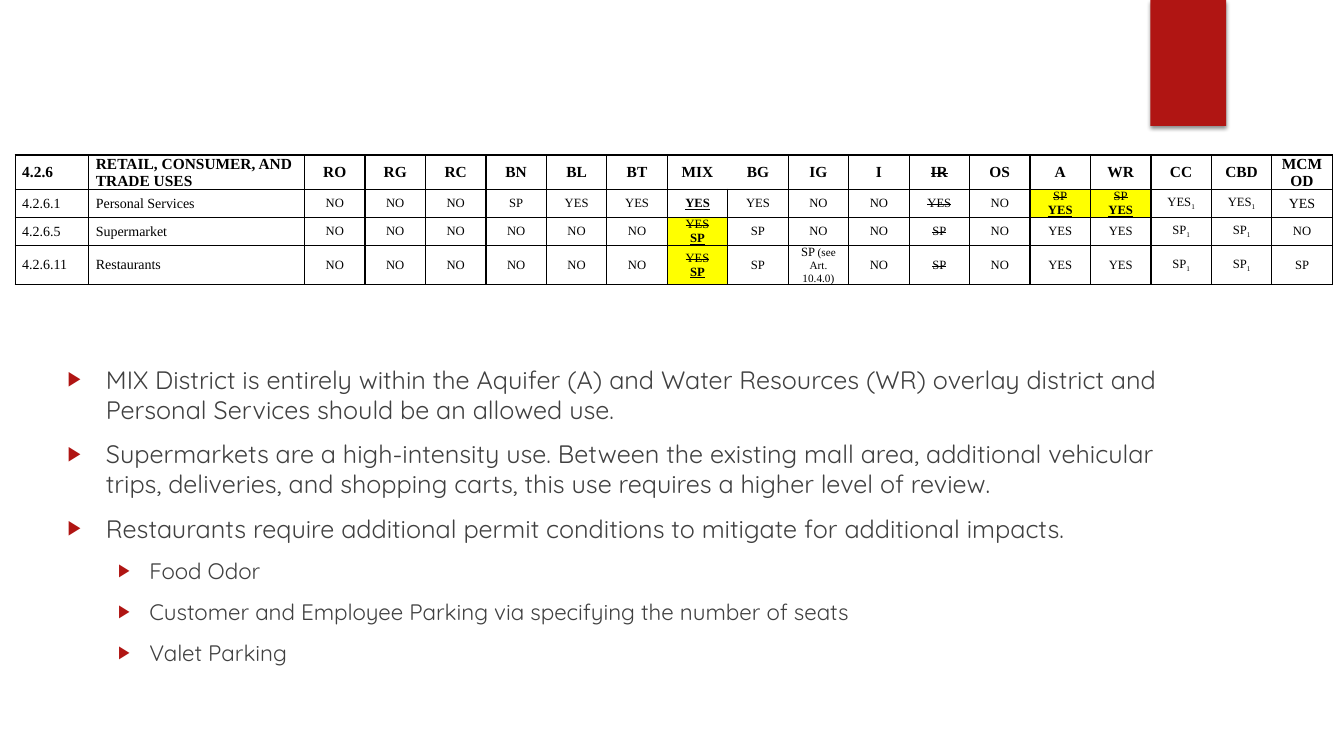
from dataclasses import dataclass

from lxml.etree import SubElement
from pptx import Presentation
from pptx.dml.color import RGBColor
from pptx.enum.shapes import MSO_SHAPE
from pptx.enum.text import MSO_ANCHOR, MSO_AUTO_SIZE, PP_ALIGN
from pptx.oxml.ns import qn
from pptx.util import Inches, Pt


@dataclass(frozen=True)
class Theme:
    accent: str = "B01513"
    body_ink: str = "404040"
    table_ink: str = "000000"
    highlight: str = "FFFF00"
    body_font: str = "Quicksand"
    table_font: str = "Times New Roman"
    point_size: int = 18
    subpoint_size: int = 16
    heading_size: int = 11
    use_size: int = 10
    code_size: int = 9
    note_size: int = 8
    thin: float = 1
    thick: float = 1.5


THEME = Theme()
SLIDE_WIDTH, SLIDE_HEIGHT = Inches(13.33), Inches(7.5)

STRUCK = {"strike": True}
ADDED = {"bold": True, "underline": True}
SUBSCRIPT = {"baseline": -25000}


def plain(text, **style):
    return [[(text, style)]]


def amended(before, after):
    return [[(before, STRUCK)], [(after, ADDED)]]


def footnoted(text):
    return [[(text, {}), ("1", SUBSCRIPT)]]


NO, SP, YES = plain("NO"), plain("SP"), plain("YES")
SEE_ARTICLE = [[("SP ", {}), ("(see Art. 10.4.0)", {"size": THEME.note_size})]]

DISTRICTS = ["RO", "RG", "RC", "BN", "BL", "BT", "MIX", "BG", "IG", "I",
             "IR", "OS", "A", "WR", "CC", "CBD", "MCMOD"]
USES = [
    ("4.2.6.1", "Personal Services",
     [NO] * 3 + [SP, YES, YES, plain("YES", **ADDED), YES, NO, NO,
                 plain("YES", **STRUCK), NO]
     + [amended("SP", "YES")] * 2 + [footnoted("YES")] * 2
     + [plain("YES", size=THEME.use_size)]),
    ("4.2.6.5", "Supermarket",
     [NO] * 6 + [amended("YES", "SP"), SP, NO, NO, plain("SP", **STRUCK), NO]
     + [YES] * 2 + [footnoted("SP")] * 2 + [NO]),
    ("4.2.6.11", "Restaurants",
     [NO] * 6 + [amended("YES", "SP"), SP, SEE_ARTICLE, NO,
                 plain("SP", **STRUCK), NO]
     + [YES] * 2 + [footnoted("SP")] * 2 + [SP]),
]
POINTS = [
    (0, "MIX District is entirely within the Aquifer (A) and Water Resources (WR) "
        "overlay district and Personal Services should be an allowed use."),
    (0, "Supermarkets are a high-intensity use. Between the existing mall area, "
        "additional vehicular trips, deliveries, and shopping carts, this use "
        "requires a higher level of review."),
    (0, "Restaurants require additional permit conditions to mitigate for "
        "additional impacts."),
    (1, "Food Odor"),
    (1, "Customer and Employee Parking via specifying the number of seats"),
    (1, "Valet Parking"),
]


def across(percent):
    return round(SLIDE_WIDTH * percent / 100)


def down(percent):
    return round(SLIDE_HEIGHT * percent / 100)


def write(paragraph, text, *, font, size, color, bold=False, underline=False,
          strike=False, baseline=0):
    run = paragraph.add_run()
    run.text = text
    run.font.name = font
    run.font.size = Pt(size)
    run.font.color.rgb = RGBColor.from_string(color)
    run.font.bold = bold
    run.font.underline = underline
    properties = run._r.get_or_add_rPr()
    if strike:
        properties.set("strike", "sngStrike")
    if baseline:
        properties.set("baseline", str(baseline))


def add_element(parent, tag, **attributes):
    return SubElement(parent, qn(tag), {k: str(v) for k, v in attributes.items()})


def add_accent_tab(slide):
    tab = slide.shapes.add_shape(MSO_SHAPE.RECTANGLE, across(85.6), 0,
                                 across(5.63), down(16.67))
    tab.fill.solid()
    tab.fill.fore_color.rgb = RGBColor.from_string(THEME.accent)
    tab.line.fill.background()
    effects = add_element(tab._element.spPr, "a:effectLst")
    shadow = add_element(effects, "a:outerShdw", blurRad=Pt(3), dist=Pt(2),
                         dir=90 * 60000, rotWithShape=0)
    shade = add_element(shadow, "a:srgbClr", val=THEME.table_ink)
    add_element(shade, "a:alpha", val=45000)


def add_bullet(paragraph, level):
    indent, hanging = ((0.38, 0.38), (0.81, 0.31))[level]
    properties = paragraph._p.get_or_add_pPr()
    properties.set("marL", str(Inches(indent)))
    properties.set("indent", str(-Inches(hanging)))
    color = add_element(properties, "a:buClr")
    add_element(color, "a:srgbClr", val=THEME.accent)
    add_element(properties, "a:buSzPct", val=80000)
    add_element(properties, "a:buChar", char="▶")


def fill_points(body):
    body.left, body.top = across(4.28), down(47.47)
    body.width, body.height = across(84.47), down(43.6)
    frame = body.text_frame
    frame.word_wrap = True
    frame.auto_size = MSO_AUTO_SIZE.NONE
    frame.vertical_anchor = MSO_ANCHOR.TOP
    for number, (level, text) in enumerate(POINTS):
        point = frame.add_paragraph() if number else frame.paragraphs[0]
        point.level = level
        point.alignment = PP_ALIGN.LEFT
        point.space_before = Pt(10 if number else 0)
        add_bullet(point, level)
        write(point, text, font=THEME.body_font, color=THEME.body_ink,
              size=(THEME.point_size, THEME.subpoint_size)[level])


def draw_borders(cell, **widths):
    properties = cell._tc.get_or_add_tcPr()
    for side in "LRTB":
        line = add_element(properties, f"a:ln{side}", w=Pt(widths[side]))
        if widths[side]:
            fill = add_element(line, "a:solidFill")
            add_element(fill, "a:srgbClr", val=THEME.table_ink)
        else:
            add_element(line, "a:noFill")


def fill_cell(cell, lines, alignment, **style):
    cell.margin_left = cell.margin_right = Inches(0.07)
    cell.margin_top = cell.margin_bottom = 0
    cell.vertical_anchor = MSO_ANCHOR.MIDDLE
    if len(lines) > 1:
        cell.fill.solid()
        cell.fill.fore_color.rgb = RGBColor.from_string(THEME.highlight)
    else:
        cell.fill.background()
    for number, runs in enumerate(lines):
        frame = cell.text_frame
        paragraph = frame.add_paragraph() if number else frame.paragraphs[0]
        paragraph.alignment = alignment
        for text, changes in runs:
            write(paragraph, text, **{"font": THEME.table_font,
                                      "color": THEME.table_ink, **style, **changes})


def add_use_table(slide):
    headings = [plain(name, **(STRUCK if name == "IR" else {})) for name in DISTRICTS]
    rows = [[plain("4.2.6"), plain("RETAIL, CONSUMER, AND TRADE USES"), *headings]]
    rows += [[plain(code), plain(use), *permits] for code, use, permits in USES]
    widths = [across(5.48), across(16.05)] + [across(4.5)] * len(DISTRICTS)
    table = slide.shapes.add_table(len(rows), len(widths), across(1.13), down(20.53),
                                   sum(widths), down(3.33) * len(rows)).table
    table.first_row = table.horz_banding = False
    for column, width in zip(table.columns, widths):
        column.width = width
    overlay_start = 2 + DISTRICTS.index("A")
    mix = 2 + DISTRICTS.index("MIX")
    for r, row in enumerate(rows):
        for c, lines in enumerate(row):
            cell = table.cell(r, c)
            left, right = (0 if r == 0 and edge == mix + 1
                           else THEME.thick if edge == overlay_start
                           else THEME.thin for edge in (c, c + 1))
            draw_borders(cell, L=left, R=right,
                         T=THEME.thick if r < 2 else THEME.thin,
                         B=THEME.thick if r == 0 else THEME.thin)
            size = (THEME.heading_size if r == 0 else
                    THEME.use_size if c < 2 else THEME.code_size)
            fill_cell(cell, lines, PP_ALIGN.LEFT if c < 2 else PP_ALIGN.CENTER,
                      size=size, bold=r == 0)


def main():
    deck = Presentation()
    deck.slide_width, deck.slide_height = SLIDE_WIDTH, SLIDE_HEIGHT
    slide = deck.slides.add_slide(deck.slide_layouts[1])
    title, body = slide.placeholders
    title._element.getparent().remove(title._element)
    add_accent_tab(slide)
    fill_points(body)
    add_use_table(slide)
    deck.save("out.pptx")


if __name__ == "__main__":
    main()
